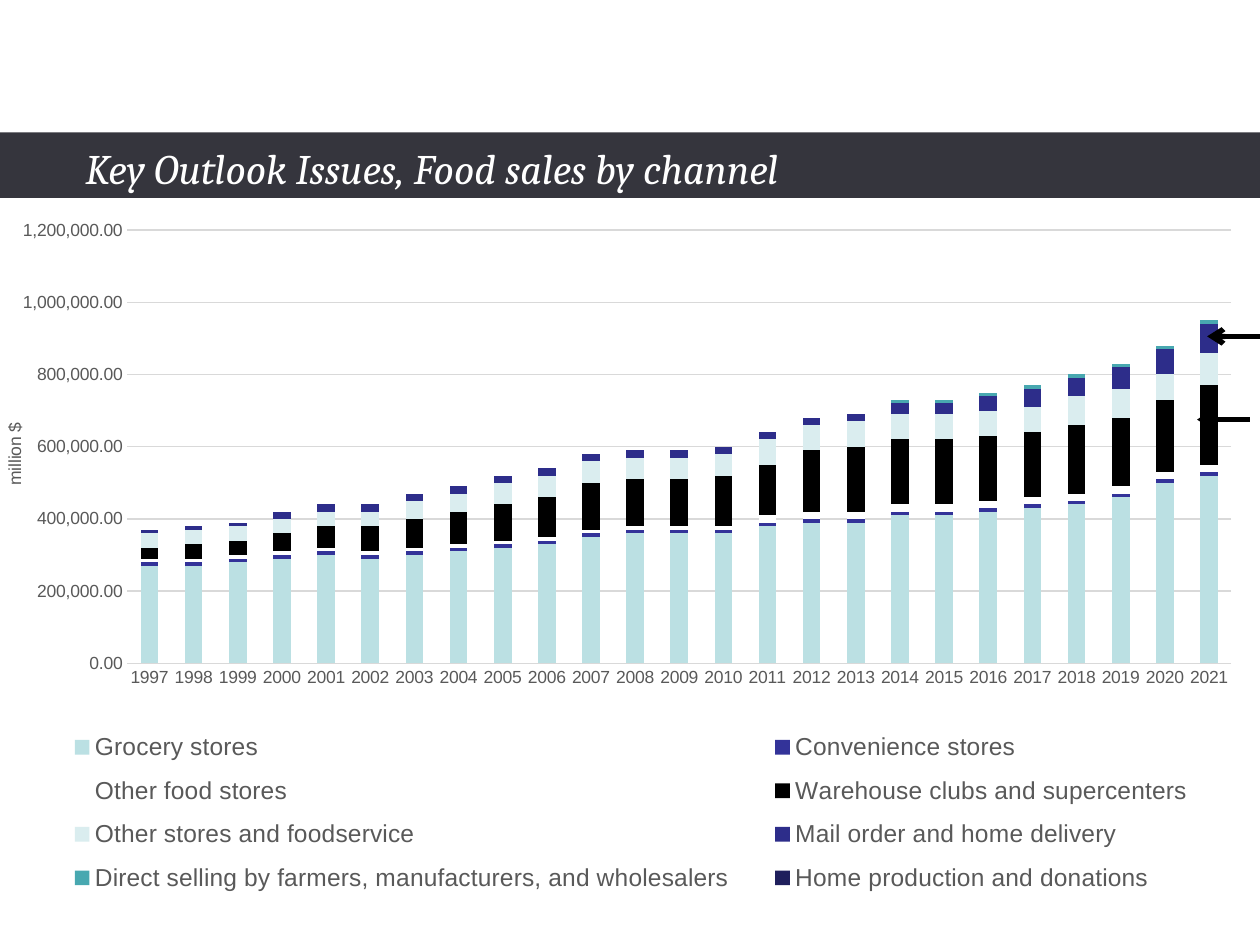
from typing import NamedTuple

from lxml.etree import SubElement
from pptx import Presentation
from pptx.chart.data import CategoryChartData
from pptx.dml.color import RGBColor
from pptx.enum.chart import XL_CHART_TYPE, XL_LEGEND_POSITION, XL_TICK_MARK
from pptx.enum.shapes import MSO_CONNECTOR, MSO_SHAPE
from pptx.oxml import parse_xml
from pptx.oxml.ns import nsdecls, qn
from pptx.util import Inches, Pt

GREY = "595959"
GRID = "D9D9D9"
YEARS = range(1997, 2022)
UNIT = 10_000  # channel sales below are in ten thousands of million $


class Channel(NamedTuple):
    name: str
    color: str
    sales: list[int]


class Arrow(NamedTuple):
    tip: float
    end: float
    y: float


CHANNELS = [
    Channel("Grocery stores", "BBE0E3",
            [27, 27, 28, 29, 30, 29, 30, 31, 32, 33, 35, 36, 36,
             36, 38, 39, 39, 41, 41, 42, 43, 44, 46, 50, 52]),
    Channel("Convenience stores", "333399", [1] * 25),
    Channel("Other food stores", "FFFFFF", [1] * 14 + [2] * 11),
    Channel("Warehouse clubs and supercenters", "000000",
            [3, 4, 4, 5, 6, 7, 8, 9, 10, 11, 13, 13, 13,
             14, 14, 17, 18, 18, 18, 18, 18, 19, 19, 20, 22]),
    Channel("Other stores and foodservice", "DAEDEF",
            [4] * 6 + [5] * 2 + [6] * 6 + [7] * 7 + [8, 8, 7, 9]),
    Channel("Mail order and home delivery", "2D2D8A",
            [1] * 3 + [2] * 14 + [3, 3, 4, 5, 5, 6, 7, 8]),
    Channel("Direct selling by farmers, manufacturers, and wholesalers",
            "48A8B0", [0] * 17 + [1] * 8),
    Channel("Home production and donations", "1F1F5C", [0] * 25),
]
ARROWS = [Arrow(9.5, 9.92, 3.33), Arrow(9.58, 10, 2.67)]


def rgb(value: str) -> RGBColor:
    return RGBColor.from_string(value)


def style_font(font, size: float, color: str, name: str = "Arial",
               italic: bool = False) -> None:
    font.size, font.name = Pt(size), name
    font.bold, font.italic = False, italic
    font.color.rgb = rgb(color)


def add_text(page, text: str, left: float, top: float, width: float,
             height: float, **style) -> None:
    box = page.shapes.add_textbox(Inches(left), Inches(top),
                                  Inches(width), Inches(height))
    box.text_frame.word_wrap = True
    span = box.text_frame.paragraphs[0].add_run()
    span.text = text
    style_font(span.font, **style)


def add_band(page) -> None:
    band = page.shapes.add_shape(MSO_SHAPE.RECTANGLE, 0, Inches(1.05),
                                 Inches(10.01), Inches(0.52))
    band.shadow.inherit = False
    band.fill.solid()
    band.fill.fore_color.rgb = rgb("35353D")
    band.line.fill.background()


def manual_layout(x: float, y: float, width: float, height: float,
                  target: str = ""):
    """Return a chart layout element in fractions of the chart area."""
    inner = f'<c:layoutTarget val="{target}"/>' if target else ""
    return parse_xml(
        f'<c:layout {nsdecls("c")}><c:manualLayout>{inner}'
        '<c:xMode val="edge"/><c:yMode val="edge"/>'
        f'<c:x val="{x}"/><c:y val="{y}"/>'
        f'<c:w val="{width}"/><c:h val="{height}"/>'
        '</c:manualLayout></c:layout>')


def set_layouts(chart) -> None:
    """Fix the places of the plot area and the legend."""
    root = chart._chartSpace
    plot_area = root.find(".//" + qn("c:plotArea"))
    legend = root.find(".//" + qn("c:legend"))
    for parent in (plot_area, legend):
        for old in parent.findall(qn("c:layout")):
            parent.remove(old)
    plot_area.insert(0, manual_layout(0.102, 0.028, 0.883, 0.615, "inner"))
    legend.find(qn("c:legendPos")).addnext(
        manual_layout(0.03, 0.72, 0.95, 0.27))


def style_axes(chart) -> None:
    for axis in (chart.category_axis, chart.value_axis):
        axis.major_tick_mark = axis.minor_tick_mark = XL_TICK_MARK.NONE
        style_font(axis.tick_labels.font, 10, GREY)
    values = chart.value_axis
    values.minimum_scale, values.maximum_scale = 0, 1_200_000
    values.major_unit = 200_000
    values.tick_labels.number_format = "#,##0.00"
    values.tick_labels.number_format_is_linked = False
    values.format.line.fill.background()
    for line in (chart.category_axis.format.line,
                 values.major_gridlines.format.line):
        line.color.rgb = rgb(GRID)
        line.width = Pt(0.75)
    title = values.axis_title.text_frame
    title.text = "million $"
    style_font(title.paragraphs[0].runs[0].font, 10, GREY)


def add_sales_chart(page) -> None:
    data = CategoryChartData()
    data.categories = [str(year) for year in YEARS]
    for channel in CHANNELS:
        data.add_series(channel.name, [sale * UNIT for sale in channel.sales])
    chart = page.shapes.add_chart(
        XL_CHART_TYPE.COLUMN_STACKED, 0, Inches(1.67),
        Inches(9.92), Inches(5.59), data).chart
    chart.has_title = False
    style_font(chart.font, 10, "000000")
    plot = chart.plots[0]
    plot.gap_width, plot.overlap = 150, 100
    plot.vary_by_categories = False
    for series, channel in zip(plot.series, CHANNELS):
        series.format.fill.solid()
        series.format.fill.fore_color.rgb = rgb(channel.color)
    style_axes(chart)
    chart.has_legend = True
    chart.legend.position = XL_LEGEND_POSITION.BOTTOM
    chart.legend.include_in_layout = False
    style_font(chart.legend.font, 14, GREY)
    set_layouts(chart)


def add_arrow(page, arrow: Arrow) -> None:
    connector = page.shapes.add_connector(
        MSO_CONNECTOR.STRAIGHT, Inches(arrow.tip), Inches(arrow.y),
        Inches(arrow.end), Inches(arrow.y))
    connector.line.color.rgb = rgb("000000")
    connector.line.width = Pt(3)
    SubElement(connector.line._get_or_add_ln(), qn("a:headEnd"), type="arrow")
    SubElement(connector._element.spPr, qn("a:effectLst"))


def main() -> None:
    deck = Presentation()
    deck.slide_width, deck.slide_height = Inches(10), Inches(7.5)
    page = deck.slides.add_slide(deck.slide_layouts[6])
    add_band(page)
    add_text(page, "Key Outlook Issues, Food sales by channel",
             0.58, 1.08, 8, 0.5, size=24, color="FFFFFF",
             name="Cambria", italic=True)
    add_sales_chart(page)
    for arrow in ARROWS:
        add_arrow(page, arrow)
    deck.save("out.pptx")


if __name__ == "__main__":
    main()
